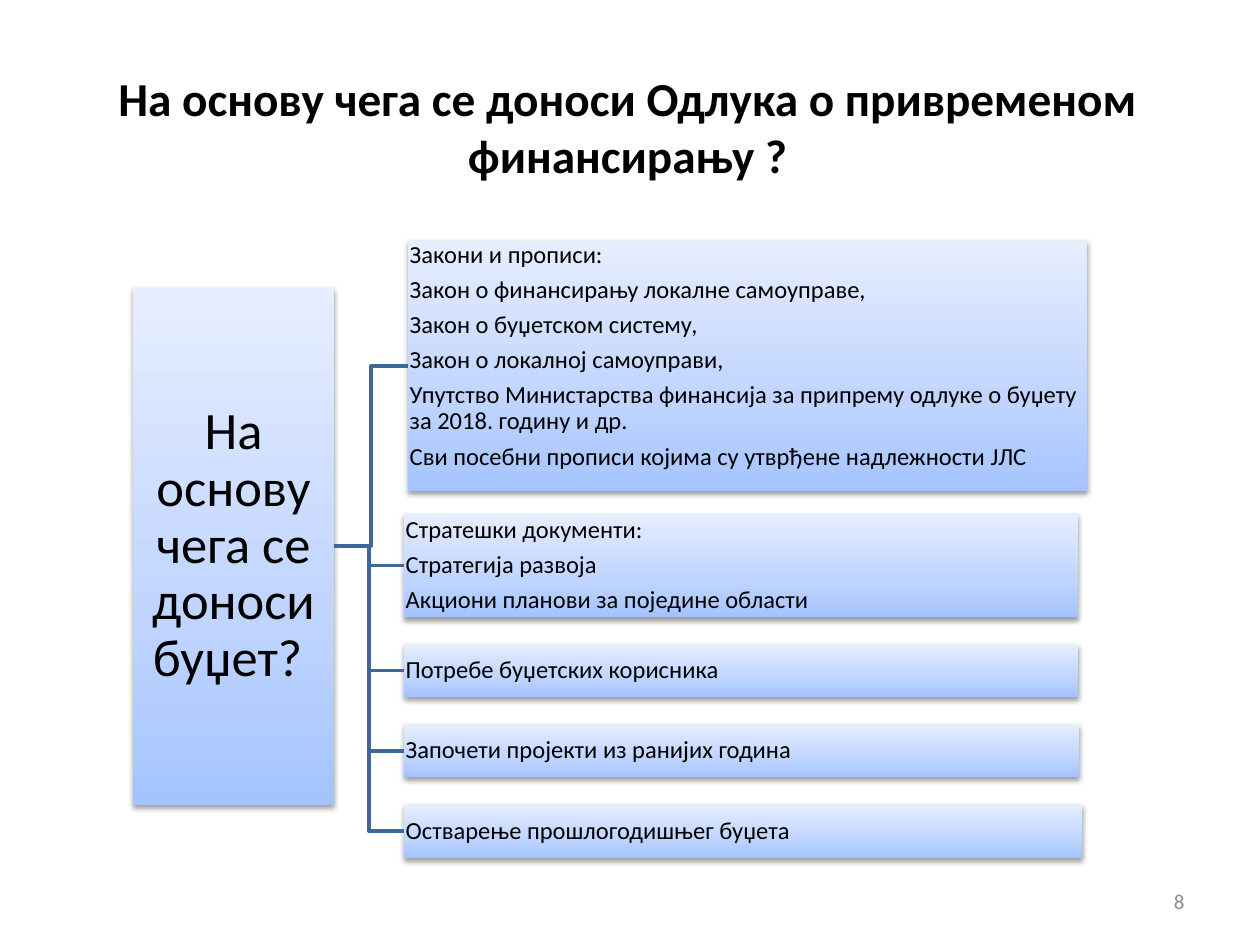
from copy import deepcopy
from dataclasses import dataclass

from lxml import etree
from pptx import Presentation
from pptx.dml.color import RGBColor
from pptx.enum.shapes import MSO_CONNECTOR, MSO_SHAPE
from pptx.enum.text import MSO_ANCHOR, PP_ALIGN
from pptx.oxml.ns import qn
from pptx.util import Cm, Pt

RECTANGLE = MSO_SHAPE.RECTANGLE
ELBOW = MSO_CONNECTOR.ELBOW
TOP, MIDDLE = MSO_ANCHOR.TOP, MSO_ANCHOR.MIDDLE
LEFT, CENTER, RIGHT = PP_ALIGN.LEFT, PP_ALIGN.CENTER, PP_ALIGN.RIGHT
LEFT_SIDE, RIGHT_SIDE = 1, 3


@dataclass(frozen=True)
class Theme:
    font: str = "Calibri"
    ink: str = "000000"
    muted: str = "8C8C8C"
    branch: str = "3F6797"
    gradient: tuple = ((0, "A4C4FF"), (0.35, "BFD4FF"), (1, "E6EEFF"))
    title_size: int = 27
    question_size: int = 30
    source_size: int = 14
    number_size: int = 12
    branch_width: int = 2


class SlideBuilder:
    def __init__(self, slide, theme):
        self.slide = slide
        self.theme = theme

    def set_text(self, frame, lines, size, color, align, anchor, bold=False):
        frame.word_wrap = True
        frame.vertical_anchor = anchor
        frame.text = "\n".join(lines)
        for paragraph in frame.paragraphs:
            paragraph.alignment = align
            font = paragraph.font
            font.name = self.theme.font
            font.size = Pt(size)
            font.bold = bold
            font.color.rgb = RGBColor.from_string(color)

    def label(self, bounds, text, size, color, align, bold=False):
        box = self.slide.shapes.add_textbox(*map(Cm, bounds))
        self.set_text(box.text_frame, [text], size, color, align, MIDDLE, bold)

    def card(self, bounds, lines, size, align=LEFT, anchor=MIDDLE, inset=0.03):
        """Add a gradient rectangle with a soft shadow and tight text."""
        card = self.slide.shapes.add_shape(RECTANGLE, *map(Cm, bounds))
        card.line.fill.background()
        self.shade(card)
        self.drop_shadow(card)
        frame = card.text_frame
        frame.margin_left = frame.margin_right = Cm(inset)
        frame.margin_top = frame.margin_bottom = Cm(inset)
        self.set_text(frame, lines, size, self.theme.ink, align, anchor)
        for paragraph in frame.paragraphs:
            paragraph.line_spacing = 0.9
            paragraph.space_after = Pt(0.35 * size)
        return card

    def shade(self, card):
        card.fill.gradient()
        card.fill.gradient_angle = 90
        stop_list = card._element.spPr.find(".//" + qn("a:gsLst"))
        stop_list.insert(1, deepcopy(stop_list[0]))
        for stop, (position, color) in zip(card.fill.gradient_stops, self.theme.gradient):
            stop.position = position
            stop.color.rgb = RGBColor.from_string(color)

    def drop_shadow(self, card):
        card.shadow.inherit = False
        effects = card._element.spPr.find(qn("a:effectLst"))
        shadow = etree.SubElement(
            effects, qn("a:outerShdw"), blurRad=str(Pt(3.1)), dist=str(Pt(1.6)),
            dir="5400000", rotWithShape="0")
        color = etree.SubElement(shadow, qn("a:srgbClr"), val=self.theme.ink)
        etree.SubElement(color, qn("a:alpha"), val="38000")

    def branch(self, parent, child):
        connector = self.slide.shapes.add_connector(ELBOW, 0, 0, 0, 0)
        connector.begin_connect(parent, RIGHT_SIDE)
        connector.end_connect(child, LEFT_SIDE)
        connector.line.color.rgb = RGBColor.from_string(self.theme.branch)
        connector.line.width = Pt(self.theme.branch_width)
        etree.SubElement(connector._element.spPr, qn("a:effectLst"))


LAWS = [
    "Закони и прописи:",
    "Закон о финансирању локалне самоуправе,",
    "Закон о буџетском систему,",
    "Закон о локалној самоуправи,",
    "Упутство Министарства финансија за припрему одлуке о буџету за 2018. годину и др.",
    "Сви посебни прописи којима су утврђене надлежности ЈЛС",
]
STRATEGIES = [
    "Стратешки документи:",
    "Стратегија развоја",
    "Акциони планови за поједине области",
]
SOURCES = [
    ((8.23, 4.85, 13.69, 5.05), LAWS, TOP),
    ((8.15, 10.34, 13.59, 2.11), STRATEGIES, MIDDLE),
    ((8.15, 12.98, 13.59, 1.07), ["Потребе буџетских корисника"], MIDDLE),
    ((8.15, 14.6, 13.61, 1.07), ["Започети пројекти из ранијих година"], MIDDLE),
    ((8.15, 16.21, 13.67, 1.09), ["Остварење прошлогодишњег буџета"], MIDDLE),
]


def main():
    presentation = Presentation()
    presentation.slide_width = Cm(25.4)
    presentation.slide_height = Cm(19.05)
    theme = Theme()
    builder = SlideBuilder(
        presentation.slides.add_slide(presentation.slide_layouts[6]), theme)

    builder.label((1.22, 1.37, 22.86, 2.36),
                  "На основу чега се доноси Одлука о привременом финансирању ?",
                  theme.title_size, theme.ink, CENTER, bold=True)
    builder.label((18.21, 17.65, 5.92, 1.02), "8",
                  theme.number_size, theme.muted, RIGHT)

    question = builder.card((2.69, 5.79, 4.04, 10.44),
                            ["На основу чега се доноси буџет? "],
                            theme.question_size, CENTER, inset=0.05)
    for bounds, lines, anchor in SOURCES:
        source = builder.card(bounds, lines, theme.source_size, anchor=anchor)
        builder.branch(question, source)

    presentation.save("out.pptx")


if __name__ == "__main__":
    main()
